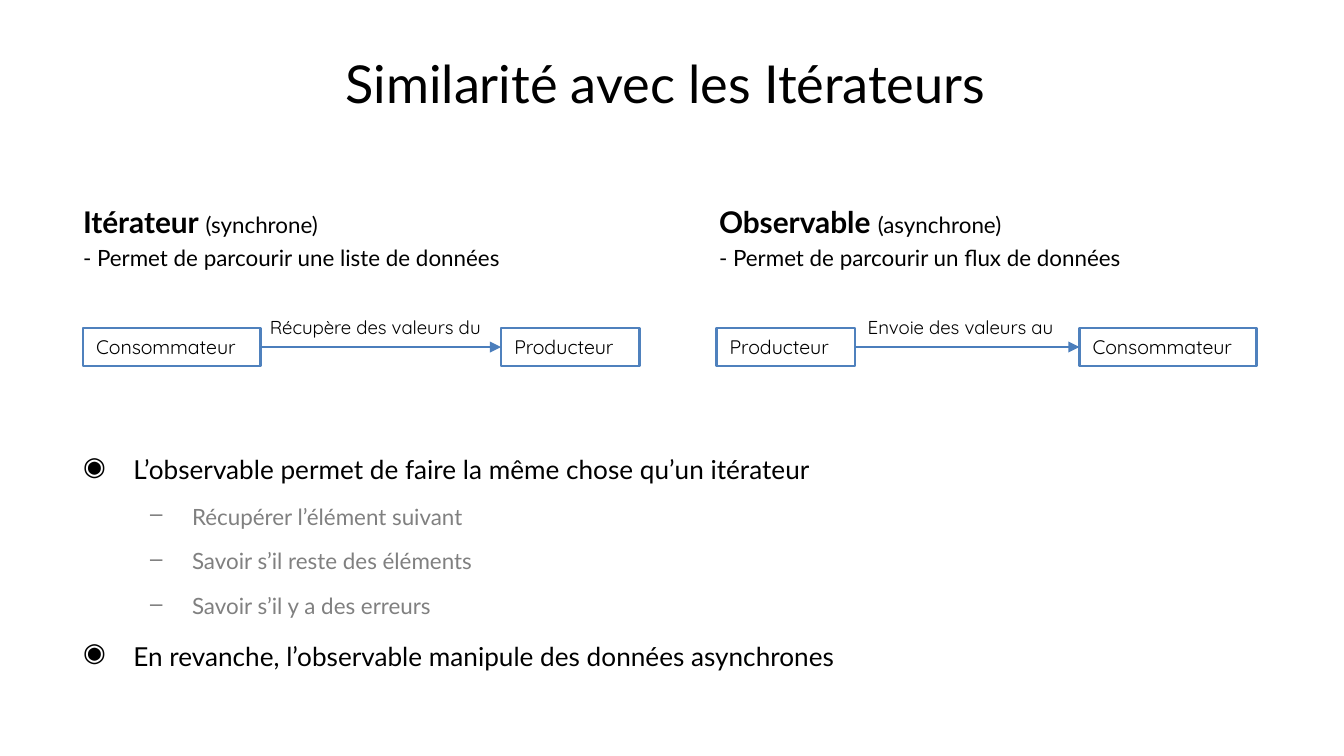
import pptx
import pptx.util
import pptx.dml.color
import pptx.enum.shapes
import pptx.enum.text
import pptx.oxml.ns
from lxml import etree
from pptx.util import Cm, Pt

BLACK = pptx.dml.color.RGBColor(0x00, 0x00, 0x00)
GREY = pptx.dml.color.RGBColor(0x80, 0x80, 0x80)
WHITE = pptx.dml.color.RGBColor(0xFF, 0xFF, 0xFF)
BOX_BLUE = pptx.dml.color.RGBColor(0x4F, 0x81, 0xBD)
ARROW_BLUE = pptx.dml.color.RGBColor(0x4B, 0x7E, 0xBC)


def add_run(p, text, size=12, font="Lato", color=BLACK, bold=False):
    r = p.add_run()
    r.text = text
    r.font.size = Pt(size)
    r.font.name = font
    r.font.color.rgb = color
    r.font.bold = bold


class SlideBuilder:
    body_font = "Lato"
    diagram_font = "Quicksand"
    line_width = Pt(1.5)

    def __init__(self, prs):
        self.s = prs.slides.add_slide(prs.slide_layouts[5])

    def title(self, text, left, top, width, height):
        sp = self.s.shapes.title
        sp.left, sp.top, sp.width, sp.height = Cm(left), Cm(top), Cm(width), Cm(height)
        tf = sp.text_frame
        tf.auto_size = pptx.enum.text.MSO_AUTO_SIZE.NONE
        tf.vertical_anchor = pptx.enum.text.MSO_ANCHOR.TOP
        p = tf.paragraphs[0]
        p.alignment = pptx.enum.text.PP_ALIGN.CENTER
        add_run(p, text, size=28, font=self.body_font)

    def textbox(self, left, top, width, height):
        sp = self.s.shapes.add_textbox(Cm(left), Cm(top), Cm(width), Cm(height))
        sp.text_frame.word_wrap = True
        return sp.text_frame

    def column(self, heading, mode, detail, left):
        tf = self.textbox(left, 3.73, 10.59, 3.81)
        p = tf.paragraphs[0]
        add_run(p, heading + " ", size=16, font=self.body_font, bold=True)
        add_run(p, mode, font=self.body_font)
        p = tf.add_paragraph()
        p.space_before = Pt(2.4)
        add_run(p, detail, font=self.body_font)

    def bullets(self, items, left, top, width, height):
        tf = self.textbox(left, top, width, height)
        for i, (level, text) in enumerate(items):
            p = tf.add_paragraph() if i else tf.paragraphs[0]
            mark, margin, indent, size, color = (
                ("–", 2.06, -0.79, 12, GREY) if level else ("◉", 0.95, -0.95, 14, BLACK)
            )
            p.level = level
            p.line_spacing = 1.5
            if i:
                p.space_before = Pt(size * 0.2)
            pPr = p._p.get_or_add_pPr()
            pPr.set("marL", str(Cm(margin)))
            pPr.set("indent", str(Cm(indent)))
            etree.SubElement(pPr, pptx.oxml.ns.qn("a:buChar"), char=mark)
            add_run(p, text, size=size, font=self.body_font, color=color)

    def fit_text(self, tf, text, size):
        tf.word_wrap = False
        tf.auto_size = pptx.enum.text.MSO_AUTO_SIZE.SHAPE_TO_FIT_TEXT
        p = tf.paragraphs[0]
        p.alignment = pptx.enum.text.PP_ALIGN.LEFT
        add_run(p, text, size=size, font=self.diagram_font)

    def box(self, text, left, width):
        sp = self.s.shapes.add_shape(
            pptx.enum.shapes.MSO_SHAPE.RECTANGLE, Cm(left), Cm(6.2), Cm(width), Cm(0.72)
        )
        sp.shadow.inherit = False
        sp.fill.solid()
        sp.fill.fore_color.rgb = WHITE
        sp.line.color.rgb = BOX_BLUE
        sp.line.width = self.line_width
        self.fit_text(sp.text_frame, text, 10.5)
        return sp

    def label(self, text, left, width):
        self.fit_text(self.textbox(left, 5.84, width, 0.69), text, 10)

    def arrow(self, source, target):
        line = self.s.shapes.add_connector(pptx.enum.shapes.MSO_CONNECTOR.STRAIGHT, 0, 0, 0, 0)
        line.begin_connect(source, 3)
        line.end_connect(target, 1)
        line.line.color.rgb = ARROW_BLUE
        line.line.width = self.line_width
        etree.SubElement(line.line._get_or_add_ln(), pptx.oxml.ns.qn("a:tailEnd"), type="triangle")
        etree.SubElement(line._element.spPr, pptx.oxml.ns.qn("a:effectLst"))


def main():
    prs = pptx.Presentation()
    prs.slide_width, prs.slide_height = Cm(25.4), Cm(14.29)
    slide = SlideBuilder(prs)
    slide.title("Similarité avec les Itérateurs ", 0, 0.84, 25.4, 0.97)

    slide.column("Itérateur", "(synchrone)", "- Permet de parcourir une liste de données", 1.32)
    slide.column("Observable", "(asynchrone)", "- Permet de parcourir un flux de données", 13.34)

    slide.bullets(
        [
            (0, "L’observable permet de faire la même chose qu’un itérateur"),
            (1, "Récupérer l’élément suivant"),
            (1, "Savoir s’il reste des éléments"),
            (1, "Savoir s’il y a des erreurs"),
            (0, "En revanche, l’observable manipule des données asynchrones"),
        ],
        1.32, 8.15, 22.81, 5.59,
    )

    widths = {"Consommateur": 3.35, "Producteur": 2.62}
    flows = [
        ("Consommateur", 1.57, "Producteur", 9.47, "Récupère des valeurs du", 4.85, 4.8),
        ("Producteur", 13.54, "Consommateur", 20.4, "Envoie des valeurs au", 16.15, 4.24),
    ]
    for source, source_left, target, target_left, label, label_left, label_width in flows:
        start = slide.box(source, source_left, widths[source])
        end = slide.box(target, target_left, widths[target])
        slide.arrow(start, end)
        slide.label(label, label_left, label_width)

    prs.save("out.pptx")


if __name__ == "__main__":
    main()
